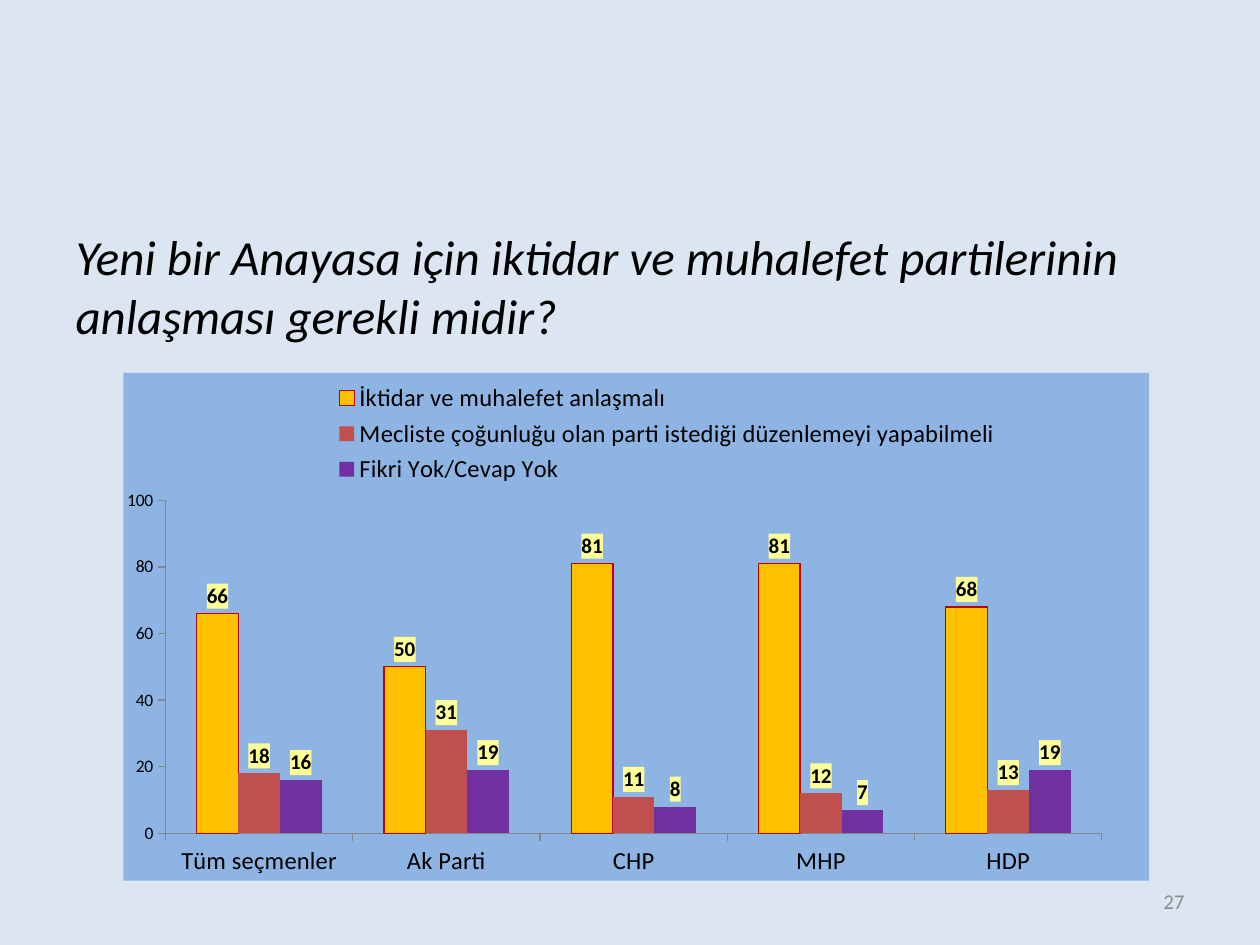
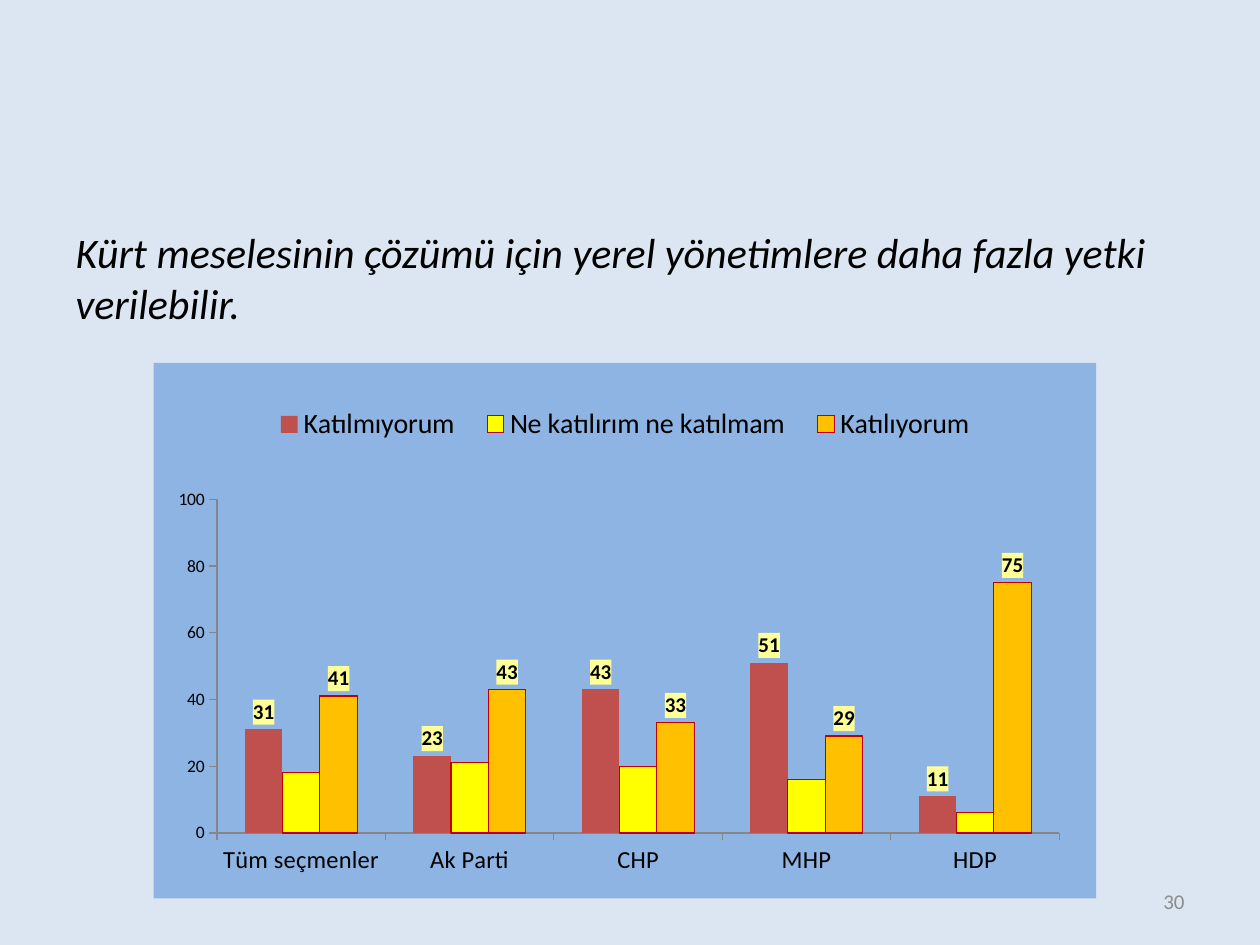
from dataclasses import dataclass

from lxml.etree import SubElement
from pptx import Presentation
from pptx.chart.chart import Chart
from pptx.chart.data import CategoryChartData
from pptx.chart.series import BarSeries
from pptx.dml.color import RGBColor
from pptx.enum.chart import XL_CHART_TYPE, XL_LABEL_POSITION, XL_LEGEND_POSITION, XL_TICK_MARK
from pptx.enum.text import MSO_ANCHOR, MSO_AUTO_SIZE, PP_ALIGN
from pptx.oxml import parse_xml
from pptx.oxml.ns import nsdecls, qn
from pptx.presentation import Presentation as Deck
from pptx.slide import Slide
from pptx.text.text import Font
from pptx.util import Inches, Pt

FONT = "Calibri"
BACKGROUND = "DCE6F2"
CHART_FILL = "8EB4E3"
LABEL_FILL = "FFFF99"
BLACK = "000000"
GREY = "8C8C8C"
AXIS_GREY = "868686"
AMBER = "FFC000"
RED = "C0504D"
DARK_RED = "C00000"
PURPLE = "7030A0"
YELLOW = "FFFF00"
VOTER_GROUPS = ["Tüm seçmenler", "Ak Parti", "CHP", "MHP", "HDP"]
TITLE_ONLY = 5

Box = tuple[float, float, float, float]


@dataclass(frozen=True)
class Answer:
    name: str
    shares: list[int]
    color: str
    outlined: bool = False
    labelled: bool = True


@dataclass(frozen=True)
class Question:
    text: str
    text_size: int
    page: str
    chart_box: Box
    plot_area: Box
    legend_area: Box
    legend_size: int
    answers: list[Answer]


QUESTIONS = [
    Question(
        "Yeni bir Anayasa için iktidar ve muhalefet partilerinin anlaşması gerekli midir?",
        28, "27", (0.98, 2.96, 8.14, 4.03),
        (0.041, 0.251, 0.913, 0.656), (0.2, 0.01, 0.66, 0.22), 14,
        [
            Answer("İktidar ve muhalefet anlaşmalı", [66, 50, 81, 81, 68], AMBER, outlined=True),
            Answer("Mecliste çoğunluğu olan parti istediği düzenlemeyi yapabilmeli",
                   [18, 31, 11, 12, 13], RED),
            Answer("Fikri Yok/Cevap Yok", [16, 19, 8, 7, 19], PURPLE),
        ],
    ),
    Question(
        "Kürt meselesinin çözümü için yerel yönetimlere daha fazla yetki verilebilir.",
        24, "30", (1.22, 2.88, 7.48, 4.25),
        (0.067, 0.255, 0.894, 0.623), (0.11, 0.07, 0.78, 0.09), 16,
        [
            Answer("Katılmıyorum", [31, 23, 43, 51, 11], RED),
            Answer("Ne katılırım ne katılmam", [18, 21, 20, 16, 6], YELLOW,
                   outlined=True, labelled=False),
            Answer("Katılıyorum", [41, 43, 33, 29, 75], AMBER, outlined=True),
        ],
    ),
]


def rgb(color: str) -> RGBColor:
    return RGBColor.from_string(color)


def set_font(font: Font, size: int, color: str = BLACK, bold: bool = False,
             italic: bool = False) -> None:
    font.name = FONT
    font.size = Pt(size)
    font.color.rgb = rgb(color)
    font.bold = bold
    font.italic = italic


def fill_behind_text(element, color: str) -> None:
    """Fill a chart part that already has text properties."""
    element.find(qn("c:txPr")).addprevious(parse_xml(
        f'<c:spPr {nsdecls("c", "a")}><a:solidFill><a:srgbClr val="{color}"/></a:solidFill>'
        "<a:ln><a:noFill/></a:ln></c:spPr>"))


def place_in_chart(element, position: int, area: Box, inner: bool = False) -> None:
    """Give a chart part a manual layout in fractions of the chart."""
    for automatic in element.findall(qn("c:layout")):
        element.remove(automatic)
    layout = parse_xml(f'<c:layout {nsdecls("c")}><c:manualLayout/></c:layout>')
    settings = [("layoutTarget", "inner")] if inner else []
    settings += [("xMode", "edge"), ("yMode", "edge")]
    settings += list(zip("xywh", area))
    for tag, value in settings:
        SubElement(layout[0], qn(f"c:{tag}")).set("val", str(value))
    element.insert(position, layout)


def add_question_title(slide: Slide, question: Question) -> None:
    title = slide.shapes.title
    title.left, title.top = Inches(0.5), Inches(1.75)
    title.width, title.height = Inches(9), Inches(4.95)
    frame = title.text_frame
    frame.text = question.text
    frame.word_wrap = True
    frame.auto_size = MSO_AUTO_SIZE.NONE
    frame.vertical_anchor = MSO_ANCHOR.TOP
    paragraph = frame.paragraphs[0]
    paragraph.alignment = PP_ALIGN.LEFT
    set_font(paragraph.font, question.text_size, italic=True)


def add_page_number(slide: Slide, page: str) -> None:
    footer = slide.shapes.add_textbox(Inches(7.17), Inches(6.95), Inches(2.33), Inches(0.4))
    frame = footer.text_frame
    frame.text = page
    frame.word_wrap = True
    frame.vertical_anchor = MSO_ANCHOR.MIDDLE
    paragraph = frame.paragraphs[0]
    paragraph.alignment = PP_ALIGN.RIGHT
    set_font(paragraph.font, 12, GREY)


def style_axes(chart: Chart) -> None:
    for axis, size in ((chart.category_axis, 14), (chart.value_axis, 10)):
        axis.has_major_gridlines = False
        axis.major_tick_mark = XL_TICK_MARK.OUTSIDE
        axis.minor_tick_mark = XL_TICK_MARK.NONE
        axis.format.line.color.rgb = rgb(AXIS_GREY)
        axis.format.line.width = Pt(0.75)
        set_font(axis.tick_labels.font, size)
    shares = chart.value_axis
    shares.minimum_scale = 0
    shares.maximum_scale = 100
    shares.major_unit = 20


def style_answer(series: BarSeries, answer: Answer) -> None:
    series.invert_if_negative = False
    series.format.fill.solid()
    series.format.fill.fore_color.rgb = rgb(answer.color)
    outline = series.format.line
    if answer.outlined:
        outline.color.rgb = rgb(DARK_RED)
        outline.width = Pt(0.75)
    else:
        outline.fill.background()
    if answer.labelled:
        labels = series.data_labels
        labels.show_value = True
        labels.position = XL_LABEL_POSITION.OUTSIDE_END
        set_font(labels.font, 12, bold=True)
        fill_behind_text(labels._element, LABEL_FILL)


def add_answer_chart(slide: Slide, question: Question) -> None:
    data = CategoryChartData(number_format="0")
    data.categories = VOTER_GROUPS
    for answer in question.answers:
        data.add_series(answer.name, answer.shares)
    chart = slide.shapes.add_chart(
        XL_CHART_TYPE.COLUMN_CLUSTERED, *map(Inches, question.chart_box), data).chart
    chart.has_title = False
    set_font(chart.font, 10)
    fill_behind_text(chart.element, CHART_FILL)

    plot = chart.plots[0]
    plot.gap_width = 150
    plot.overlap = 0
    plot.vary_by_categories = False
    style_axes(chart)
    for series, answer in zip(plot.series, question.answers):
        style_answer(series, answer)

    chart.has_legend = True
    chart.legend.position = XL_LEGEND_POSITION.RIGHT
    chart.legend.include_in_layout = False
    set_font(chart.legend.font, question.legend_size)
    chart_parts = chart.element.find(qn("c:chart"))
    place_in_chart(chart_parts.find(qn("c:plotArea")), 0, question.plot_area, inner=True)
    place_in_chart(chart_parts.find(qn("c:legend")), 1, question.legend_area)


def add_question_slide(deck: Deck, question: Question) -> None:
    slide = deck.slides.add_slide(deck.slide_layouts[TITLE_ONLY])
    slide.background.fill.solid()
    slide.background.fill.fore_color.rgb = rgb(BACKGROUND)
    add_question_title(slide, question)
    add_page_number(slide, question.page)
    add_answer_chart(slide, question)


def main() -> None:
    deck = Presentation()
    deck.slide_width, deck.slide_height = Inches(10), Inches(7.5)
    for question in QUESTIONS:
        add_question_slide(deck, question)
    deck.save("out.pptx")


if __name__ == "__main__":
    main()
